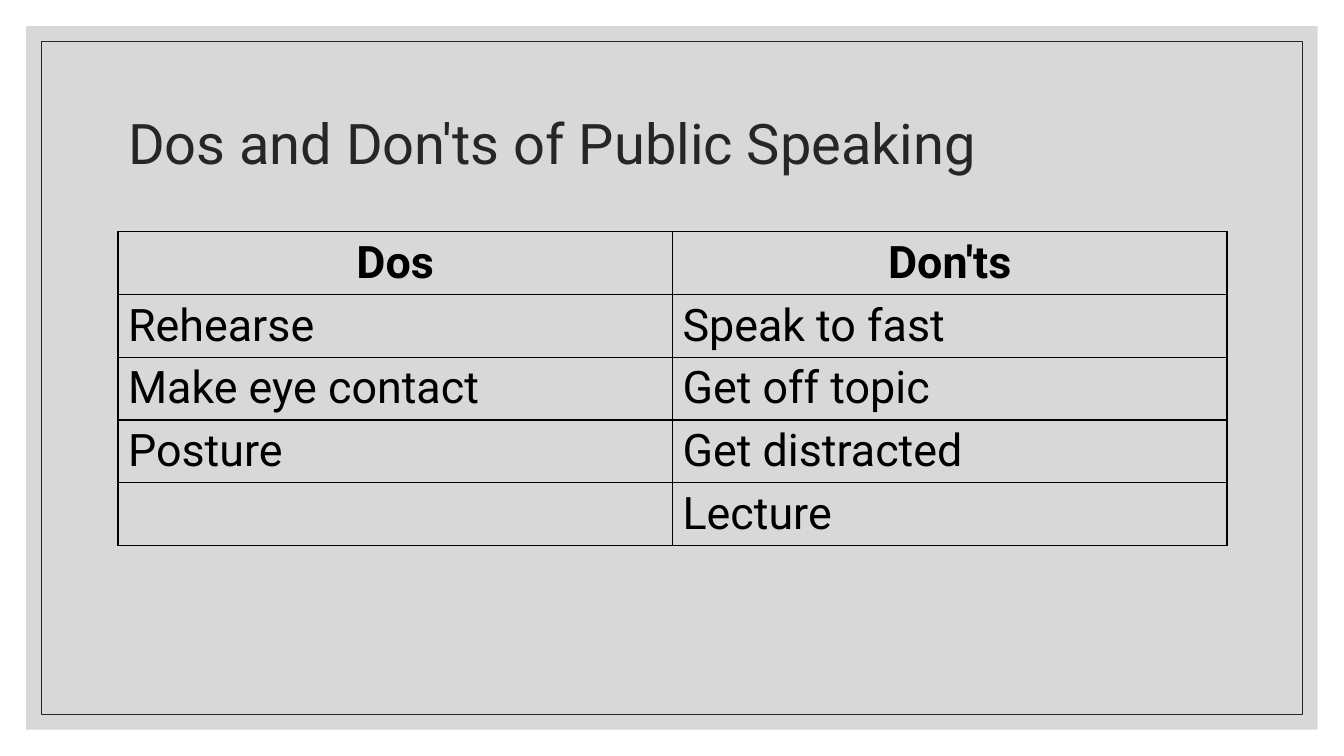
from lxml.etree import SubElement
from pptx import Presentation
from pptx.dml.color import RGBColor
from pptx.enum.shapes import MSO_SHAPE
from pptx.enum.text import MSO_ANCHOR, PP_ALIGN
from pptx.oxml import parse_xml
from pptx.oxml.ns import nsdecls, qn
from pptx.util import Inches, Pt

TITLE = "Dos and Don'ts of Public Speaking"
ROWS = [
    ("Dos", "Don'ts"),
    ("Rehearse", "Speak to fast"),
    ("Make eye contact", "Get off topic"),
    ("Posture", "Get distracted"),
    ("", "Lecture"),
]
FONT = "Roboto"
BLACK = RGBColor(0x00, 0x00, 0x00)
DARK = RGBColor(0x26, 0x26, 0x26)
GREY = RGBColor(0xBF, 0xBF, 0xBF)

WIDTH, HEIGHT = 13.33, 7.5
PANEL_MARGIN, FRAME_MARGIN = 0.26, 0.41
CONTENT_WIDTH = 11
CONTENT_LEFT = round((WIDTH - CONTENT_WIDTH) / 2, 2)
TITLE_TOP, TITLE_HEIGHT = 0.7, 1.5
TABLE_TOP, ROW_HEIGHT = 2.3, 0.62


def write(frame, text, size, color, bold=False, align=PP_ALIGN.LEFT, spacing=1.0):
    para = frame.paragraphs[0]
    para.alignment = align
    para.line_spacing = spacing
    span = para.add_run()
    span.text = text
    span.font.name = FONT
    span.font.size = Pt(size)
    span.font.bold = bold
    span.font.color.rgb = color


def add_inset_rectangle(page, margin):
    """Add a rectangle that keeps the same margin to all slide edges."""
    box = page.shapes.add_shape(
        MSO_SHAPE.RECTANGLE, Inches(margin), Inches(margin),
        Inches(WIDTH - 2 * margin), Inches(HEIGHT - 2 * margin))
    box.shadow.inherit = False
    return box


def add_backdrop(page):
    panel = add_inset_rectangle(page, PANEL_MARGIN)
    panel.fill.solid()
    panel.fill.fore_color.rgb = GREY
    panel.line.fill.background()
    color = panel.fill._xPr.find(qn("a:solidFill"))[0]
    SubElement(color, qn("a:alpha"), val="60000")

    frame = add_inset_rectangle(page, FRAME_MARGIN)
    frame.fill.background()
    frame.line.color.rgb = DARK
    frame.line.width = Pt(0.5)


def add_title(page):
    title = page.shapes.title
    title.left, title.top = Inches(CONTENT_LEFT), Inches(TITLE_TOP)
    title.width, title.height = Inches(CONTENT_WIDTH), Inches(TITLE_HEIGHT)
    title.text_frame.vertical_anchor = MSO_ANCHOR.MIDDLE
    write(title.text_frame, TITLE, 40, DARK, spacing=0.9)
    page.shapes._spTree.append(title._element)  # bring in front of the backdrop


def set_borders(cell):
    properties = cell._tc.get_or_add_tcPr()
    for position, side in enumerate(("lnL", "lnR", "lnT", "lnB")):
        properties.insert(position, parse_xml(
            f'<a:{side} {nsdecls("a")} w="{Pt(1)}"><a:solidFill>'
            f'<a:srgbClr val="{BLACK}"/></a:solidFill></a:{side}>'))


def add_comparison(page):
    table = page.shapes.add_table(
        len(ROWS), len(ROWS[0]), Inches(CONTENT_LEFT), Inches(TABLE_TOP),
        Inches(CONTENT_WIDTH), Inches(ROW_HEIGHT * len(ROWS))).table
    table.horz_banding = False
    for row, texts in enumerate(ROWS):
        header = row == 0
        for column, text in enumerate(texts):
            cell = table.cell(row, column)
            cell.fill.background()
            set_borders(cell)
            if text:
                write(cell.text_frame, text, 32, BLACK, bold=header,
                      align=PP_ALIGN.CENTER if header else PP_ALIGN.LEFT)


def main():
    deck = Presentation()
    deck.slide_width, deck.slide_height = Inches(WIDTH), Inches(HEIGHT)
    page = deck.slides.add_slide(deck.slide_layouts.get_by_name("Title Only"))
    add_backdrop(page)
    add_title(page)
    add_comparison(page)
    deck.save("out.pptx")


if __name__ == "__main__":
    main()
